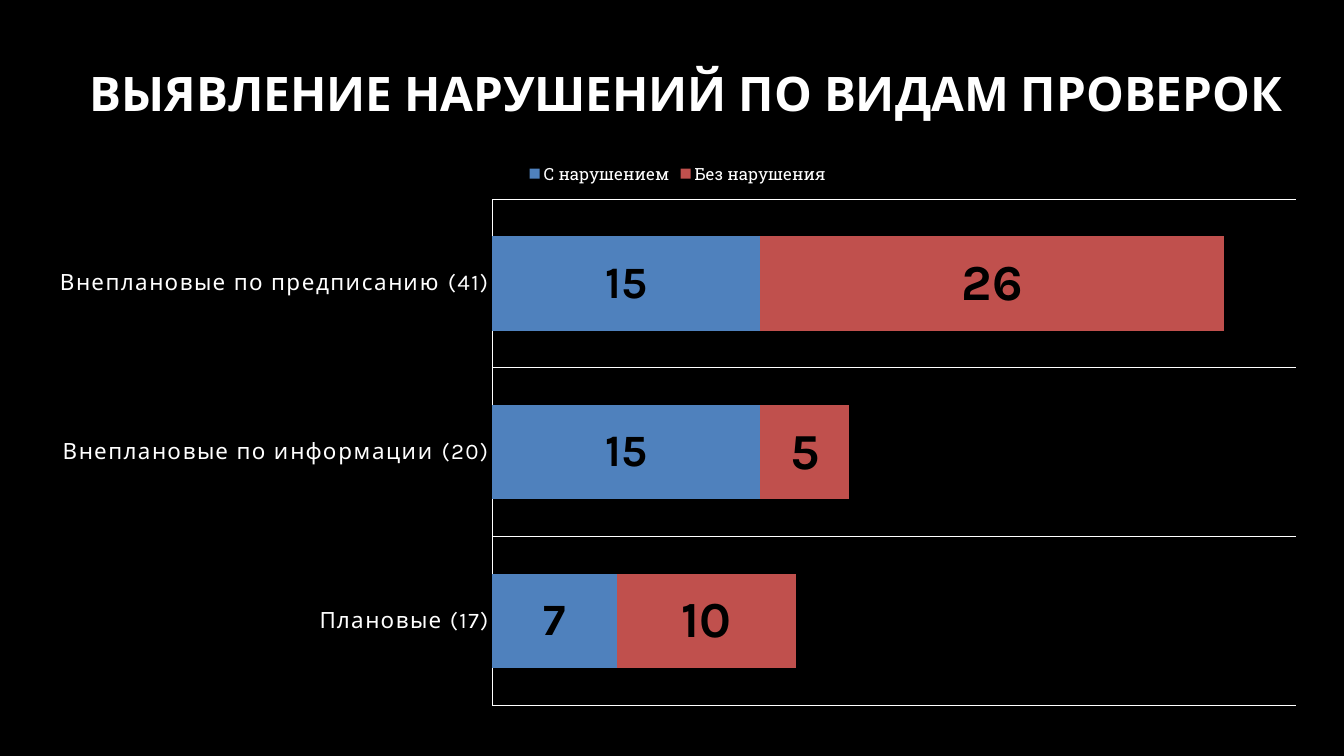
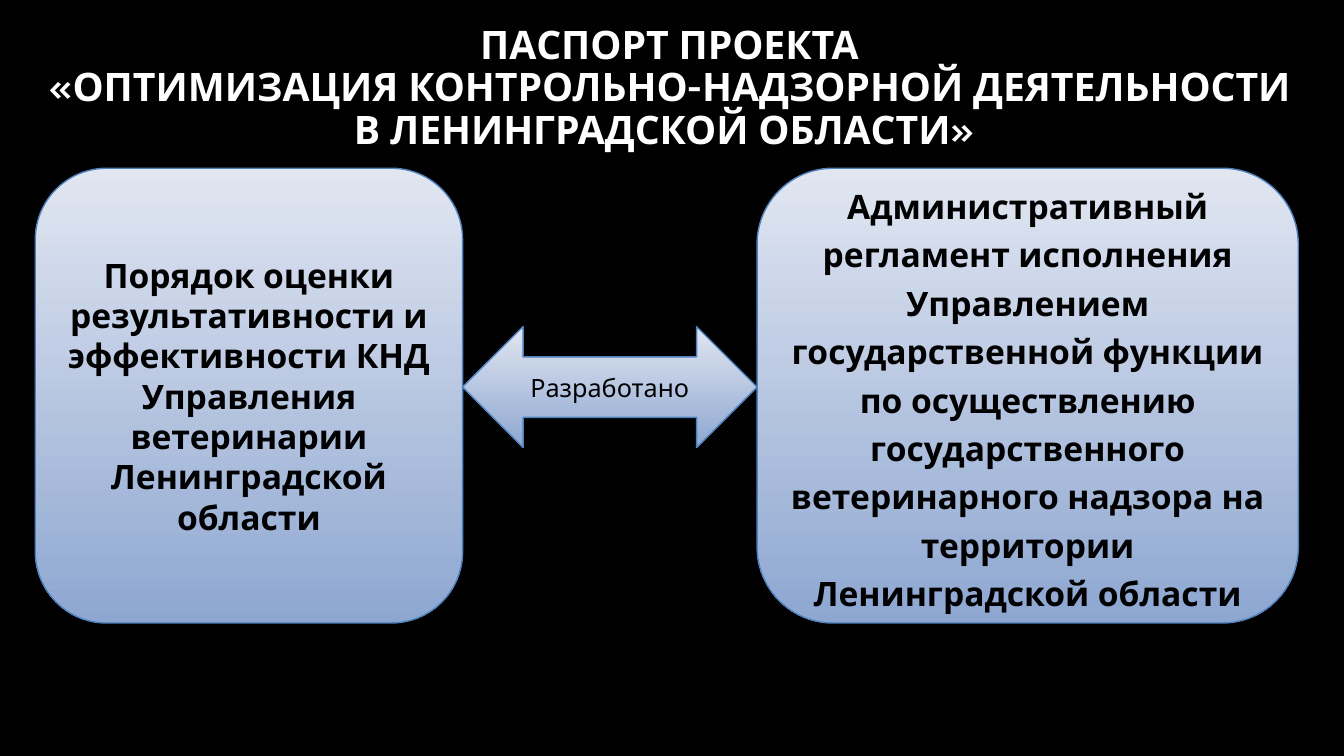
import dataclasses

import pptx
import pptx.chart.data
import pptx.dml.color
import pptx.enum.chart
import pptx.enum.shapes
import pptx.enum.text
import pptx.oxml
import pptx.util
from pptx.util import Cm

BLACK = "000000"
WHITE = "FFFFFF"
BLUE = "4F81BD"
RED = "C0504D"
PANEL_TOP = "E1E6F1"
PANEL_BOTTOM = "8EA7D1"
TEXT_FONT = "Karla"
LEGEND_FONT = "Roboto Slab"
SHAPES = pptx.enum.shapes.MSO_SHAPE


@dataclasses.dataclass(frozen=True)
class Box:
    left: float
    top: float
    width: float
    height: float

    def lengths(self) -> tuple:
        return Cm(self.left), Cm(self.top), Cm(self.width), Cm(self.height)


@dataclasses.dataclass(frozen=True)
class Panel:
    kind: SHAPES
    box: Box
    text: str
    size: float = 24
    bold: bool = True
    line_spacing: float = 1.0
    space_before: float = 0


@dataclasses.dataclass(frozen=True)
class Series:
    name: str
    values: tuple[int, ...]
    color: str
    label_size: float


CATEGORIES = (
    "Плановые (17)",
    "Внеплановые по информации (20)",
    "Внеплановые по предписанию (41)",
)
INSPECTIONS = (
    Series("С нарушением", (7, 15, 15), BLUE, 32),
    Series("Без нарушения", (10, 5, 26), RED, 36),
)

PANEL_Y = 4.24
PANEL_HEIGHT = 11.46
LEFT_PANEL = Box(0.89, PANEL_Y, 10.77, PANEL_HEIGHT)
RIGHT_PANEL = Box(19.08, PANEL_Y, 13.64, PANEL_HEIGHT)
ARROW_LEFT = LEFT_PANEL.left + LEFT_PANEL.width
PANELS = (
    Panel(
        SHAPES.ROUNDED_RECTANGLE,
        RIGHT_PANEL,
        "Административный регламент исполнения Управлением государственной функции "
        "по осуществлению государственного ветеринарного надзора на территории "
        "Ленинградской области",
        line_spacing=1.2,
        space_before=10,
    ),
    Panel(
        SHAPES.ROUNDED_RECTANGLE,
        LEFT_PANEL,
        "Порядок оценки результативности и эффективности КНД Управления ветеринарии "
        "Ленинградской области",
    ),
    Panel(
        SHAPES.LEFT_RIGHT_ARROW,
        Box(ARROW_LEFT, 8.23, RIGHT_PANEL.left - ARROW_LEFT, 3.05),
        "Разработано",
        size=18,
        bold=False,
    ),
)


def rgb(value: str) -> pptx.dml.color.RGBColor:
    return pptx.dml.color.RGBColor.from_string(value)


def format_font(font, *, size: float, color: str, name: str = TEXT_FONT, bold: bool = False) -> None:
    font.name = name
    font.size = pptx.util.Pt(size)
    font.bold = bold
    font.color.rgb = rgb(color)


def write_text(
    shape,
    text: str,
    *,
    size: float,
    color: str,
    bold: bool = True,
    line_spacing: float = 1.0,
    space_before: float = 0,
) -> None:
    frame = shape.text_frame
    frame.word_wrap = True
    frame.auto_size = pptx.enum.text.MSO_AUTO_SIZE.NONE
    frame.vertical_anchor = pptx.enum.text.MSO_ANCHOR.MIDDLE
    paragraph = frame.paragraphs[0]
    paragraph.text = text
    paragraph.alignment = pptx.enum.text.PP_ALIGN.CENTER
    paragraph.line_spacing = line_spacing
    paragraph.space_before = pptx.util.Pt(space_before)
    for run in paragraph.runs:
        format_font(run.font, size=size, color=color, bold=bold)


def add_titled_slide(presentation, text: str, box: Box, size: float):
    slide = presentation.slides.add_slide(presentation.slide_layouts[5])
    title = slide.shapes.title
    title.left, title.top, title.width, title.height = box.lengths()
    write_text(title, text, size=size, color=WHITE, line_spacing=0.9)
    return slide


def add_panel(slide, panel: Panel) -> None:
    shape = slide.shapes.add_shape(panel.kind, *panel.box.lengths())
    shape.shadow.inherit = False
    shape.fill.gradient()
    shape.fill.gradient_angle = 270
    for stop, color, position in zip(shape.fill.gradient_stops, (PANEL_TOP, PANEL_BOTTOM), (0, 1)):
        stop.color.rgb = rgb(color)
        stop.position = position
    shape.line.color.rgb = rgb(BLUE)
    shape.line.width = pptx.util.Pt(1)
    write_text(
        shape,
        panel.text,
        size=panel.size,
        color=BLACK,
        bold=panel.bold,
        line_spacing=panel.line_spacing,
        space_before=panel.space_before,
    )


def format_line(line) -> None:
    line.color.rgb = rgb(WHITE)
    line.width = pptx.util.Pt(0.75)


def place_plot(chart, *, x: float, y: float, w: float, h: float) -> None:
    plot_area = chart._chartSpace.chart.plotArea
    for old_layout in plot_area.xpath("c:layout"):
        plot_area.remove(old_layout)
    sizes = "".join(f'<c:{key} val="{value}"/>' for key, value in dict(x=x, y=y, w=w, h=h).items())
    layout = pptx.oxml.parse_xml(
        '<c:layout xmlns:c="http://schemas.openxmlformats.org/drawingml/2006/chart">'
        '<c:manualLayout><c:layoutTarget val="inner"/>'
        f'<c:xMode val="edge"/><c:yMode val="edge"/>{sizes}</c:manualLayout></c:layout>'
    )
    plot_area.insert(0, layout)


def format_axes(chart) -> None:
    category_axis = chart.category_axis
    category_axis.major_tick_mark = pptx.enum.chart.XL_TICK_MARK.NONE
    category_axis.has_major_gridlines = True
    format_line(category_axis.major_gridlines.format.line)
    format_line(category_axis.format.line)
    format_font(category_axis.tick_labels.font, size=16, color=WHITE)
    for properties in category_axis._element.xpath("c:txPr//a:defRPr"):
        properties.set("spc", "120")
    value_axis = chart.value_axis
    value_axis.minimum_scale = 0
    value_axis.maximum_scale = 45
    value_axis.has_major_gridlines = False
    value_axis.visible = False


def add_inspection_chart(slide, box: Box) -> None:
    data = pptx.chart.data.CategoryChartData()
    data.categories = CATEGORIES
    for series in INSPECTIONS:
        data.add_series(series.name, series.values)
    kind = pptx.enum.chart.XL_CHART_TYPE.BAR_STACKED
    chart = slide.shapes.add_chart(kind, *box.lengths(), data).chart
    chart.has_title = False
    format_font(chart.font, size=10, color=WHITE, name=LEGEND_FONT)
    chart.has_legend = True
    chart.legend.position = pptx.enum.chart.XL_LEGEND_POSITION.TOP
    chart.legend.include_in_layout = False
    format_font(chart.legend.font, size=12, color=WHITE, name=LEGEND_FONT)
    format_axes(chart)
    plot = chart.plots[0]
    plot.gap_width = 79
    plot.overlap = 100
    plot.vary_by_categories = False
    for bars, series in zip(plot.series, INSPECTIONS):
        bars.invert_if_negative = False
        bars.format.fill.solid()
        bars.format.fill.fore_color.rgb = rgb(series.color)
        labels = bars.data_labels
        labels.show_value = True
        labels.position = pptx.enum.chart.XL_LABEL_POSITION.CENTER
        format_font(labels.font, size=series.label_size, color=BLACK, bold=True)
    place_plot(chart, x=0.356, y=0.085, w=0.624, h=0.895)


def main() -> None:
    presentation = pptx.Presentation()
    presentation.slide_width = Cm(33.87)
    presentation.slide_height = Cm(19.05)
    background = presentation.slide_master.background.fill
    background.solid()
    background.fore_color.rgb = rgb(BLACK)

    chart_slide = add_titled_slide(
        presentation,
        "ВЫЯВЛЕНИЕ НАРУШЕНИЙ ПО ВИДАМ ПРОВЕРОК",
        Box(1.57, 0.58, 31.45, 3.68),
        34,
    )
    add_inspection_chart(chart_slide, Box(0.86, 3.81, 32.44, 14.25))

    project_slide = add_titled_slide(
        presentation,
        "ПАСПОРТ ПРОЕКТА\n«ОПТИМИЗАЦИЯ КОНТРОЛЬНО-НАДЗОРНОЙ ДЕЯТЕЛЬНОСТИ "
        "В ЛЕНИНГРАДСКОЙ ОБЛАСТИ» ",
        Box(0.64, 0.41, 32.46, 3.68),
        28,
    )
    for panel in PANELS:
        add_panel(project_slide, panel)

    presentation.save("out.pptx")


if __name__ == "__main__":
    main()
